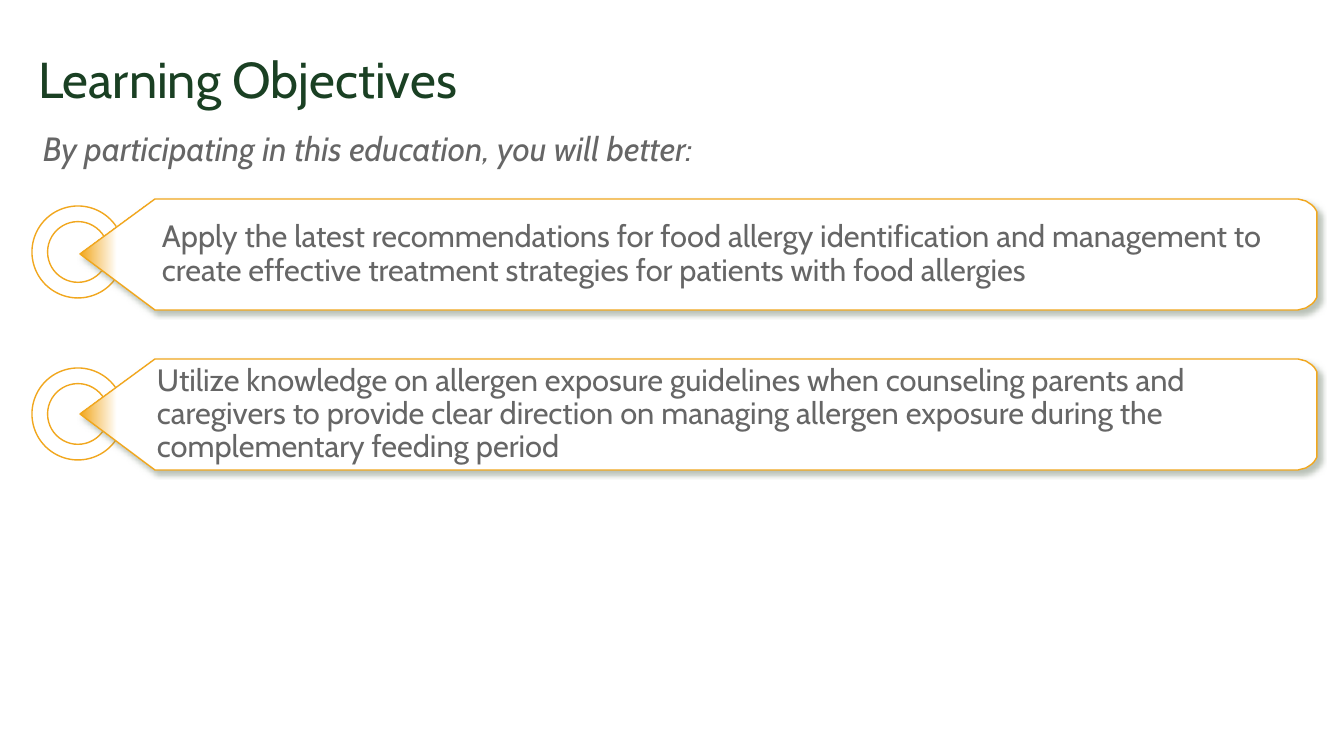
from math import cos, radians, sin

from lxml import etree
from pptx import Presentation
from pptx.dml.color import RGBColor
from pptx.enum.shapes import MSO_SHAPE as Shape
from pptx.enum.text import MSO_ANCHOR as Anchor, MSO_AUTO_SIZE as AutoSize, PP_ALIGN as Align
from pptx.oxml import parse_xml
from pptx.oxml.ns import nsdecls, qn
from pptx.util import Pt

SCALE = 12192000 / 1344  # EMU per px
GOLD, WHITE, GREEN, GRAY = "F1A71E", "FFFFFF", "1A4023", "666666"
SHADOW = (
    f'<a:outerShdw {nsdecls("a")} blurRad="50800" dist="38100" dir="2700000" algn="tl" '
    'rotWithShape="0"><a:srgbClr val="758572"><a:alpha val="50000"/></a:srgbClr></a:outerShdw>'
)


def px(*lengths):
    """Return whole EMU for lengths in px; a single length comes back bare."""
    emu = [round(length * SCALE) for length in lengths]
    return emu[0] if len(emu) == 1 else emu


def write(paragraph, text, size, color, indent=0):
    paragraph.text = text
    paragraph.alignment = Align.LEFT
    paragraph._p.get_or_add_pPr().set("marL", str(px(indent)))
    paragraph.font.name = "Cabin"
    paragraph.font.size = Pt(size)
    paragraph.font.color.rgb = RGBColor.from_string(color)


deck = Presentation()
deck.slide_width, deck.slide_height = px(1344, 756)
page = deck.slides.add_slide(deck.slide_layouts[5])

title = page.shapes.title
title.left, title.top, title.width, title.height = px(28, 19, 1288, 126)
title.text_frame.vertical_anchor = Anchor.MIDDLE
title.text_frame.auto_size = AutoSize.NONE
write(title.text_frame.paragraphs[0], "Learning Objectives", 36, GREEN)
title.text_frame.paragraphs[0].line_spacing = 0.9

# Introductory line
table = page.shapes.add_table(1, 1, *px(28, 124, 1269, 50)).table
table.first_row = table.horz_banding = False
intro = table.cell(0, 0)
intro.fill.background()
intro.margin_left = intro.margin_right = intro.margin_top = intro.margin_bottom = px(5)
intro_line = intro.text_frame.paragraphs[0]
write(intro_line, "By participating in this education, you will better:", 24, GRAY, 10)
intro_line.font.italic = True

# Objectives: ring top, banner top, text indent, text
objectives = [
    (206, 199, 18, "Apply the latest recommendations for food allergy identification and "
     "management to create effective treatment strategies for patients with food allergies"),
    (368, 359, 13, "Utilize knowledge on allergen exposure guidelines when counseling parents "
     "and caregivers to provide clear direction on managing allergen exposure during the "
     "complementary feeding period"),
]
TIP, SHOULDER, RIGHT, HEIGHT = 80, 155, 1317, 111
CORNER_X, CORNER_Y = 23, 16

for ring_top, top, indent, text in objectives:
    ring = page.shapes.add_shape(Shape.DONUT, *px(32, ring_top, 92, 92))
    ring.adjustments[0] = 0.17
    ring.fill.solid()
    ring.fill.fore_color.rgb = RGBColor.from_string(WHITE)
    ring_color = ring._element.spPr.find(qn("a:solidFill"))[0]
    etree.SubElement(ring_color, qn("a:alpha")).set("val", "50000")

    bottom = top + HEIGHT
    arc = [(CORNER_X * (1 - sin(radians(angle))), CORNER_Y * (1 - cos(radians(angle))))
           for angle in range(0, 91, 10)]
    upper_corner = [(RIGHT - x, top + y) for x, y in arc]
    lower_corner = [(RIGHT - x, bottom - y) for x, y in reversed(arc)]
    outline = page.shapes.build_freeform(TIP, top + HEIGHT / 2, scale=SCALE)
    outline.add_line_segments(
        [(SHOULDER, top), *upper_corner, *lower_corner, (SHOULDER, bottom)], close=True)
    banner = outline.convert_to_shape()
    banner.fill.gradient()
    banner.fill.gradient_angle = 0
    for stop, position, color in zip(banner.fill.gradient_stops, (0, 0.03), (GOLD, WHITE)):
        stop.position = position
        stop.color.rgb = RGBColor.from_string(color)

    for shape in (ring, banner):
        shape.line.color.rgb = RGBColor.from_string(GOLD)
        shape.line.width = Pt(1)
        shape.shadow.inherit = False
    banner._element.spPr.find(qn("a:effectLst")).append(parse_xml(SHADOW))

    frame = banner.text_frame
    frame.word_wrap = True
    frame.vertical_anchor = Anchor.MIDDLE
    frame.margin_left, frame.margin_top, frame.margin_right, frame.margin_bottom = px(64, 8, 14, 8)
    write(frame.paragraphs[0], text, 22, GRAY, indent)
    frame.paragraphs[0].line_spacing = 0.9

deck.save("out.pptx")
